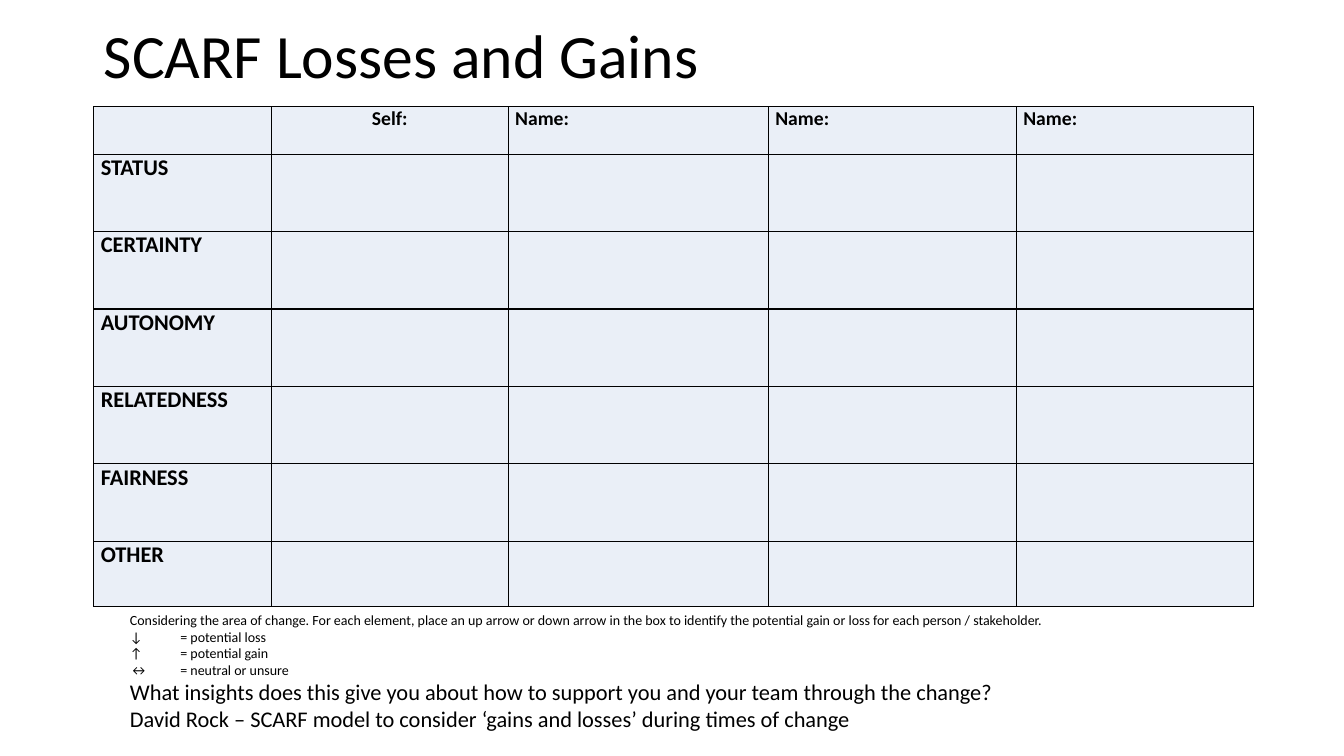
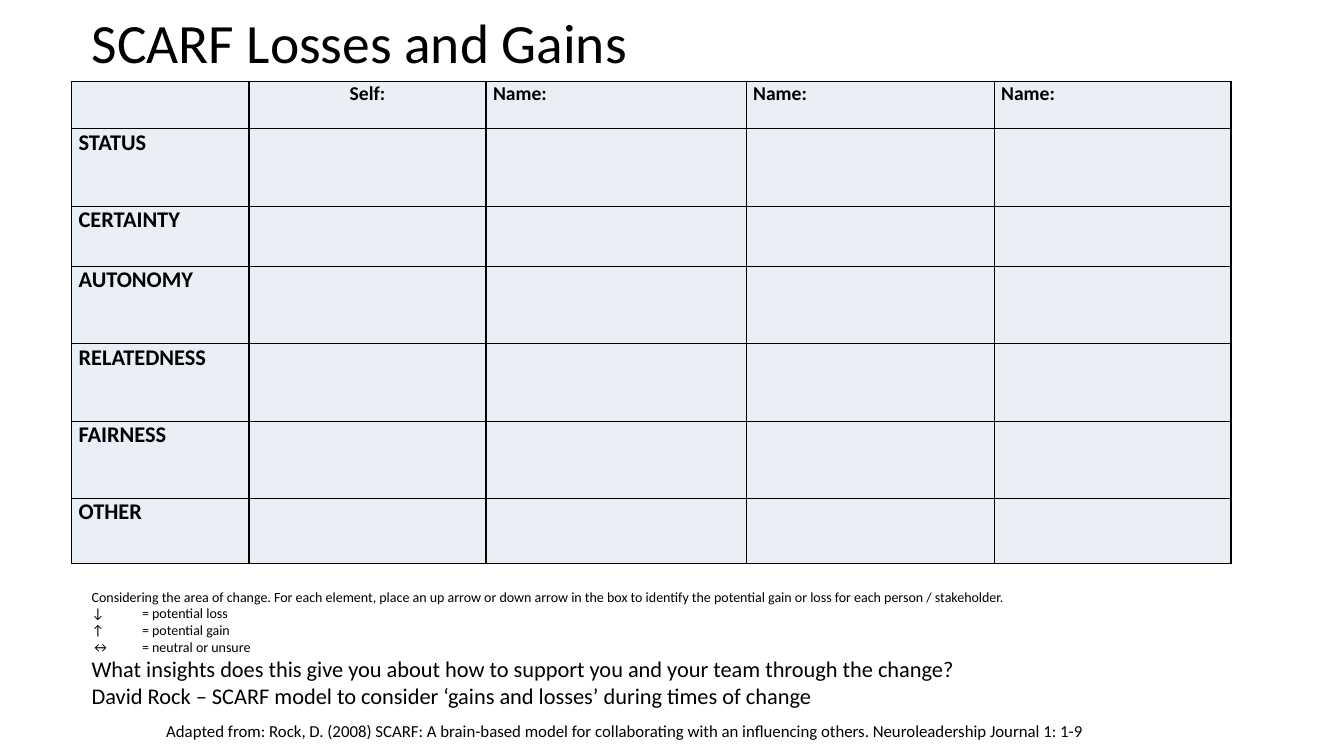
from dataclasses import dataclass

import pptx
import pptx.dml.color
import pptx.enum.text
import pptx.oxml
import pptx.oxml.ns
import pptx.util
from pptx.slide import Slide
from pptx.table import _Cell
from pptx.text.text import TextFrame

Align = pptx.enum.text.PP_ALIGN
Anchor = pptx.enum.text.MSO_ANCHOR
Fit = pptx.enum.text.MSO_AUTO_SIZE


@dataclass(frozen=True)
class Theme:
    font: str = "Calibri"
    ink: str = "000000"
    cell: str = "EAEFF7"
    note: float = 10
    source: float = 12
    head: float = 14
    body: float = 16
    rule: float = 1


@dataclass(frozen=True)
class Box:
    """Place and size in percent of the slide."""
    left: float
    top: float
    width: float
    height: float

    def frame(self) -> tuple[int, int, int, int]:
        return (int(WIDE * self.left / 100), int(HIGH * self.top / 100),
                int(WIDE * self.width / 100), int(HIGH * self.height / 100))


@dataclass(frozen=True)
class Line:
    text: str
    size: float


@dataclass(frozen=True)
class Page:
    title: Box
    size: float
    grid: Box
    rows: tuple[int, ...]
    notes: Box
    source: Box | None = None


THEME = Theme()
WIDE, HIGH = pptx.util.Inches(13.33), pptx.util.Inches(7.5)

TITLE = "SCARF Losses and Gains"
HEADS = ("", "Self:", "Name:", "Name:", "Name:")
LABELS = ("STATUS", "CERTAINTY", "AUTONOMY", "RELATEDNESS", "FAIRNESS", "OTHER")
COLS = (176, 235, 258, 246, 235)  # parts of the table's width
NOTES = (
    Line("Considering the area of change. For each element, place an up arrow or down arrow "
         "in the box to identify the potential gain or loss for each person / stakeholder.",
         THEME.note),
    Line("↓\t= potential loss", THEME.note),
    Line("↑\t= potential gain", THEME.note),
    Line("↔\t= neutral or unsure", THEME.note),
    Line("What insights does this give you about how to support you and your team "
         "through the change?", THEME.body),
    Line("David Rock – SCARF model to consider ‘gains and losses’ during times of change",
         THEME.body),
)
SOURCE = ("Adapted from: Rock, D. (2008) SCARF: A brain-based model for collaborating with "
          "an influencing others. Neuroleadership Journal 1: 1-9")

PAGES = (
    Page(title=Box(6.98, 1.47, 86.27, 12.67), size=44,
         grid=Box(6.98, 14.13, 86.27, 66.13), rows=(47, 77, 77, 77, 77, 77, 65),
         notes=Box(8.93, 80.13, 91.07, 17.47)),
    Page(title=Box(6.08, 1.33, 86.27, 9.47), size=39.6,
         grid=Box(5.33, 10.8, 86.27, 63.8), rows=(47, 77, 60, 77, 77, 77, 65),
         notes=Box(6.08, 77.07, 91.07, 17.47),
         source=Box(11.63, 94.67, 82.37, 4)),
)


def write(frame: TextFrame, text: str, *, size: float, bold: bool = False,
          align: Align = Align.LEFT, lead: float | None = None, more: bool = False) -> None:
    """Write one paragraph; more adds it below those already there."""
    para = frame.add_paragraph() if more else frame.paragraphs[0]
    para.alignment = align
    if lead:
        para.line_spacing = lead
    run = para.add_run()
    run.text = text
    font = run.font
    font.name, font.size, font.bold = THEME.font, pptx.util.Pt(size), bold
    font.color.rgb = pptx.dml.color.RGBColor.from_string(THEME.ink)


def add_box(slide: Slide, box: Box, anchor: Anchor, grow: bool = True) -> TextFrame:
    frame = slide.shapes.add_textbox(*box.frame()).text_frame
    frame.word_wrap = True
    frame.auto_size = Fit.SHAPE_TO_FIT_TEXT if grow else Fit.NONE
    frame.vertical_anchor = anchor
    return frame


def style(cell: _Cell) -> None:
    """Fill the cell and rule its four sides."""
    cell.fill.solid()
    cell.fill.fore_color.rgb = pptx.dml.color.RGBColor.from_string(THEME.cell)
    cell.margin_left = cell.margin_right = pptx.util.Inches(0.07)
    cell.margin_top = cell.margin_bottom = 0
    props = cell._tc.get_or_add_tcPr()
    for spot, side in enumerate("LRTB"):
        props.insert(spot, pptx.oxml.parse_xml(
            f'<a:ln{side} {pptx.oxml.ns.nsdecls("a")} w="{pptx.util.Pt(THEME.rule)}">'
            f'<a:solidFill><a:srgbClr val="{THEME.ink}"/></a:solidFill></a:ln{side}>'))


def add_grid(slide: Slide, page: Page) -> None:
    left, top, width, height = page.grid.frame()
    table = slide.shapes.add_table(len(page.rows), len(COLS), left, top, width, height).table
    table.first_row = table.horz_banding = False
    for col, part in zip(table.columns, COLS):
        col.width = width * part // sum(COLS)
    for row, part in zip(table.rows, page.rows):
        row.height = height * part // sum(page.rows)
    for cell in table.iter_cells():
        style(cell)
    for col, text in enumerate(HEADS):
        if text:
            write(table.cell(0, col).text_frame, text, size=THEME.head, bold=True,
                  align=Align.CENTER if col == 1 else Align.LEFT)
    for row, text in enumerate(LABELS, 1):
        write(table.cell(row, 0).text_frame, text, size=THEME.body, bold=True)


def draw(slide: Slide, page: Page) -> None:
    write(add_box(slide, page.title, Anchor.MIDDLE, grow=False), TITLE,
          size=page.size, lead=0.9)
    add_grid(slide, page)
    notes = add_box(slide, page.notes, Anchor.MIDDLE)
    for rank, line in enumerate(NOTES):
        write(notes, line.text, size=line.size, more=rank > 0)
    if page.source:
        write(add_box(slide, page.source, Anchor.TOP), SOURCE, size=THEME.source)


def main() -> None:
    deck = pptx.Presentation()
    deck.slide_width, deck.slide_height = WIDE, HIGH
    for page in PAGES:
        draw(deck.slides.add_slide(deck.slide_layouts[6]), page)
    deck.save("out.pptx")


if __name__ == "__main__":
    main()
